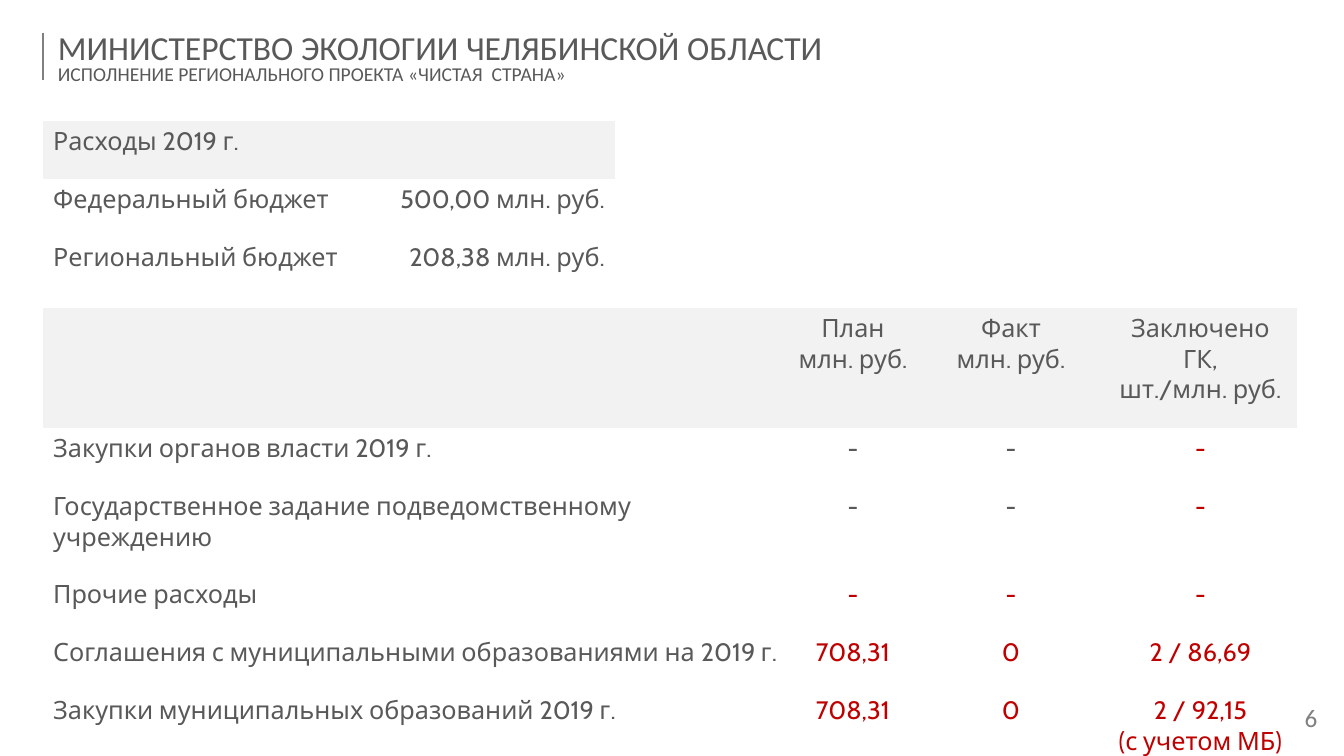
from dataclasses import dataclass

from lxml.etree import SubElement
from pptx import Presentation
from pptx.dml.color import RGBColor
from pptx.enum.shapes import MSO_CONNECTOR
from pptx.enum.text import MSO_ANCHOR, PP_ALIGN
from pptx.oxml.ns import qn
from pptx.util import Emu, Pt

PX = 914400 / 100.8
NO_TABLE_STYLE = "{2D5ABB26-0587-4C30-8999-92F81FD0307C}"


@dataclass(frozen=True)
class Theme:
    text: str = "595959"
    alert: str = "C00000"
    muted: str = "808080"
    band: str = "F2F2F2"
    heading_font: str = "Calibri"
    table_font: str = "Cabin"
    title_size: int = 24
    subtitle_size: int = 14
    body_size: int = 18


def px(length):
    return Emu(round(length * PX))


def write(para, text, *, size, font, color, align=PP_ALIGN.LEFT, spacing=None):
    para.alignment = align
    if spacing:
        para.line_spacing = spacing
    span = para.add_run()
    span.text = text
    span.font.size = Pt(size)
    span.font.name = font
    span.font.color.rgb = RGBColor.from_string(color)


class SlideBuilder:
    def __init__(self, slide, theme):
        self.slide = slide
        self.theme = theme

    def line(self, start, end, color, width):
        points = [px(value) for value in (*start, *end)]
        line = self.slide.shapes.add_connector(MSO_CONNECTOR.STRAIGHT, *points)
        line.line.color.rgb = RGBColor.from_string(color)
        line.line.width = Pt(width)
        SubElement(line._element.spPr, qn("a:effectLst"))

    def text(self, left, top, width, height, lines, **style):
        """Place a text box; lines holds (text, size, color) for each paragraph."""
        box = self.slide.shapes.add_textbox(px(left), px(top), px(width), px(height))
        frame = box.text_frame
        frame.word_wrap = True
        frame.vertical_anchor = MSO_ANCHOR.MIDDLE
        for index, (text, size, color) in enumerate(lines):
            para = frame.add_paragraph() if index else frame.paragraphs[0]
            write(para, text, size=size, color=color, spacing=0.8,
                  font=self.theme.heading_font, **style)

    def table(self, left, top, widths, heights, rows, value_align, alerts=()):
        """Place a table with a shaded first row; alerts holds (row, column) of red cells."""
        frame = self.slide.shapes.add_table(
            len(heights), len(widths), px(left), px(top), px(sum(widths)), px(sum(heights)))
        table = frame.table
        table.first_row = table.horz_banding = False
        table._tbl.tblPr.find(qn("a:tableStyleId")).text = NO_TABLE_STYLE
        for column, width in zip(table.columns, widths):
            column.width = px(width)
        for row, height in zip(table.rows, heights):
            row.height = px(height)
        for r, values in enumerate(rows):
            for c, value in enumerate(values):
                cell = table.cell(r, c)
                if r == 0:
                    cell.fill.solid()
                    cell.fill.fore_color.rgb = RGBColor.from_string(self.theme.band)
                else:
                    cell.fill.background()
                color = self.theme.alert if (r, c) in alerts else self.theme.text
                align = value_align if c else PP_ALIGN.LEFT
                for index, text in enumerate(value.splitlines()):
                    frame = cell.text_frame
                    para = frame.add_paragraph() if index else frame.paragraphs[0]
                    write(para, text, size=self.theme.body_size, color=color,
                          font=self.theme.table_font, align=align)


BUDGET = [
    ("Расходы 2019 г.", ""),
    ("Федеральный бюджет", "500,00 млн. руб."),
    ("Региональный бюджет", "208,38 млн. руб."),
]
SPENDING = [
    ("", "План\nмлн. руб.", "Факт\nмлн. руб.", "Заключено ГК,\nшт./млн. руб."),
    ("Закупки органов власти 2019 г.", "-", "-", "-"),
    ("Государственное задание подведомственному учреждению", "-", "-", "-"),
    ("Прочие расходы", "-", "-", "-"),
    ("Соглашения с муниципальными образованиями на 2019 г.", "708,31", "0", "2 / 86,69"),
    ("Закупки муниципальных образований 2019 г.", "708,31", "0", "2 / 92,15\n(с учетом МБ)"),
]
SPENDING_ALERTS = {(1, 3), (2, 3)} | {(r, c) for r in (3, 4, 5) for c in (1, 2, 3)}


def main():
    deck = Presentation()
    deck.slide_width, deck.slide_height = px(1344), px(756)
    theme = Theme()
    page = SlideBuilder(deck.slides.add_slide(deck.slide_layouts[6]), theme)

    page.line((43, 33), (43, 80), theme.muted, 1.5)
    page.text(48, 26, 1290, 68, [
        ("МИНИСТЕРСТВО ЭКОЛОГИИ ЧЕЛЯБИНСКОЙ ОБЛАСТИ", theme.title_size, theme.text),
        ("ИСПОЛНЕНИЕ РЕГИОНАЛЬНОГО ПРОЕКТА «ЧИСТАЯ  СТРАНА»", theme.subtitle_size, theme.text),
    ])
    page.table(43, 121, [345, 227], [58] * 3, BUDGET, PP_ALIGN.RIGHT)
    page.table(43, 308, [745, 130, 186, 193], [120, 58, 88, 58, 58, 66],
               SPENDING, PP_ALIGN.CENTER, SPENDING_ALERTS)
    page.text(1278, 695, 66, 50, [("6", theme.body_size, theme.muted)], align=PP_ALIGN.CENTER)

    deck.save("out.pptx")


if __name__ == "__main__":
    main()
